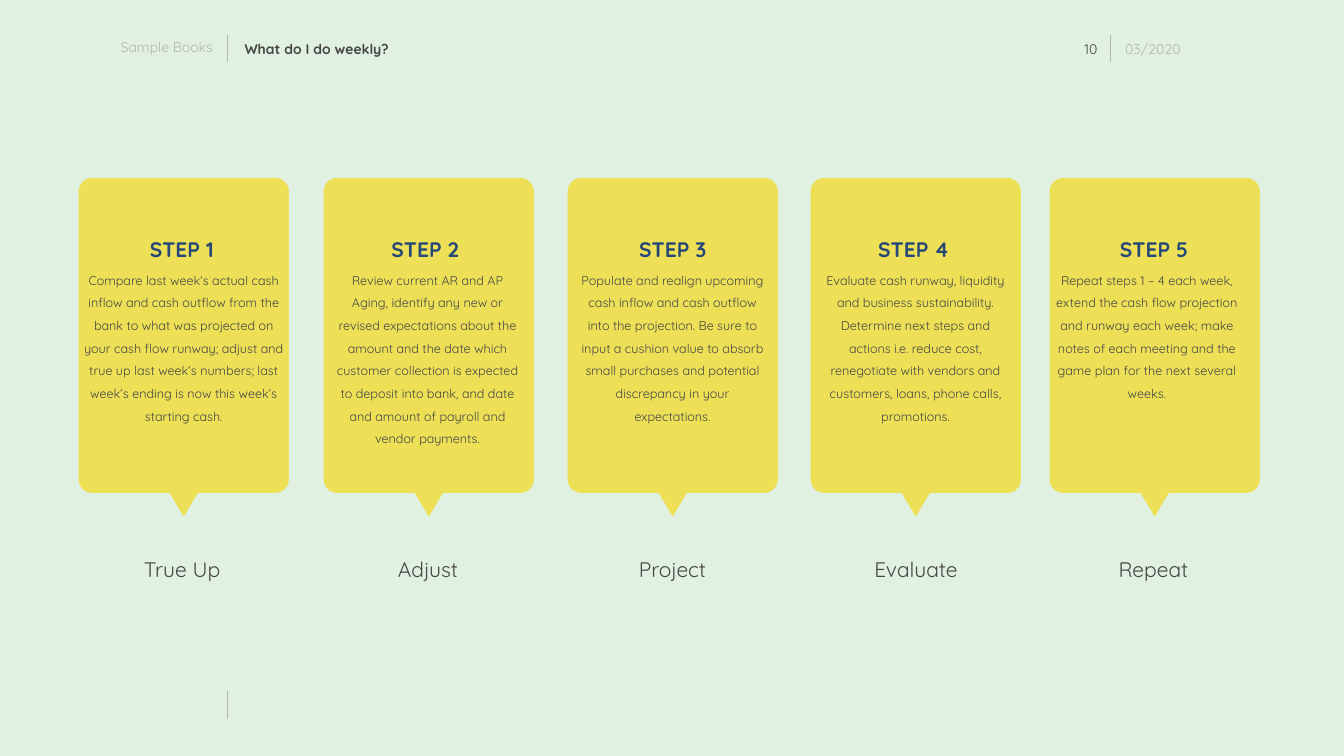
import dataclasses
import math
import typing

import pptx
import pptx.dml.color
import pptx.enum.shapes
import pptx.enum.text
import pptx.oxml
import pptx.oxml.ns
import pptx.shapes.base
import pptx.slide
import pptx.util

RGB = pptx.dml.color.RGBColor
ALIGN = pptx.enum.text.PP_ALIGN
AUTO = pptx.enum.text.MSO_AUTO_SIZE

PX = 9144  # EMU in one px, 100 px to the inch
MINT = RGB(0xE1, 0xF1, 0xE1)
YELLOW = RGB(0xED, 0xE0, 0x57)
NAVY = RGB(0x26, 0x48, 0x77)
INK = RGB(0x46, 0x46, 0x46)
GREY = RGB(0xB4, 0xB4, 0xB4)

CARD_TOP, CARD_W, CARD_H, RADIUS = 353, 417, 625, 27
POINTER_W, POINTER_H = 56, 47
ARC_STEPS = 8


class Box(typing.NamedTuple):
    x: int
    y: int
    w: int
    h: int


@dataclasses.dataclass(frozen=True)
class Style:
    size: int
    color: RGB
    align: ALIGN = ALIGN.CENTER
    bold: bool = False
    spacing: float = 1.0
    inset: int = 10
    fit: AUTO = AUTO.SHAPE_TO_FIT_TEXT


@dataclasses.dataclass(frozen=True)
class Step:
    card_x: int
    heading_x: int
    body_x: int
    body_w: int
    body_h: int
    caption_x: int
    caption: str
    body: str


TITLE = Style(20, INK, ALIGN.LEFT, bold=True)
PAGE = Style(20, INK, ALIGN.RIGHT, inset=20)
COMPANY = Style(20, GREY, ALIGN.RIGHT)
DATE = Style(20, GREY, ALIGN.LEFT)
HEADING = Style(30, NAVY, bold=True, spacing=1.5)
BODY = Style(18, INK, spacing=1.5)
CAPTION = Style(30, INK, spacing=1.3, inset=20, fit=AUTO.NONE)

STEPS = [
    Step(156, 147, 156, 417, 368, 145, "True Up",
         "Compare last week‘s actual cash inflow and cash outflow from the bank to what "
         "was projected on your cash flow runway; adjust and true up last week‘s numbers; "
         "last week‘s ending is now this week‘s starting cash."),
    Step(642, 630, 654, 388, 413, 633, "Adjust",
         "Review current AR and AP Aging, identify any new or revised expectations about "
         "the amount and the date which customer collection is expected to deposit into "
         "bank, and date and amount of payroll and vendor payments."),
    Step(1126, 1121, 1140, 388, 368, 1118, "Project",
         "Populate and realign upcoming cash inflow and cash outflow into the projection. "
         "Be sure to input a cushion value to absorb small purchases and potential "
         "discrepancy in your expectations."),
    Step(1608, 1599, 1622, 388, 322, 1601, "Evaluate",
         "Evaluate cash runway, liquidity and business sustainability. Determine next "
         "steps and actions i.e. reduce cost, renegotiate with vendors and customers, "
         "loans, phone calls, promotions."),
    Step(2082, 2076, 2081, 388, 277, 2072, "Repeat",
         "Repeat steps 1 – 4 each week, extend the cash flow projection and runway each "
         "week; make notes of each meeting and the game plan for the next several weeks."),
]


def set_all(target: object, values: dict[str, typing.Any]) -> None:
    for name, value in values.items():
        setattr(target, name, value)


def write(sp: pptx.shapes.base.BaseShape, box: Box, text: str, style: Style) -> None:
    """Place a text shape and fill it with one formatted paragraph."""
    set_all(sp, dict(zip(("left", "top", "width", "height"), (v * PX for v in box))))
    tf = sp.text_frame
    side, edge = style.inset * PX, style.inset * PX // 2
    set_all(tf, {
        "word_wrap": True, "auto_size": style.fit,
        "vertical_anchor": pptx.enum.text.MSO_ANCHOR.TOP,
        "margin_left": side, "margin_right": side,
        "margin_top": edge, "margin_bottom": edge,
    })
    p = tf.paragraphs[0]
    set_all(p, {"alignment": style.align, "line_spacing": style.spacing})
    r = p.add_run()
    r.text = text
    set_all(r.font, {"name": "Quicksand", "size": pptx.util.Pt(style.size),
                     "bold": style.bold})
    r.font.color.rgb = style.color


def add_text(s: pptx.slide.Slide, box: Box, text: str, style: Style) -> None:
    write(s.shapes.add_textbox(0, 0, 0, 0), box, text, style)


def add_divider(s: pptx.slide.Slide, x: int, y: int) -> None:
    c = s.shapes.add_connector(pptx.enum.shapes.MSO_CONNECTOR.STRAIGHT,
                               x * PX, y * PX, x * PX, (y + 55) * PX)
    c.line.color.rgb = GREY
    c.line.width = pptx.util.Pt(0.75)
    spPr = c._element.spPr
    spPr.append(pptx.oxml.parse_xml(
        f'<a:effectLst {pptx.oxml.ns.nsdecls("a")}/>'))


def corner(cx: float, cy: float, start: int) -> list[tuple[float, float]]:
    """Points of a clockwise quarter circle from the start angle in degrees."""
    angles = [math.radians(start + 90 * i / ARC_STEPS) for i in range(ARC_STEPS + 1)]
    return [(cx + RADIUS * math.cos(a), cy + RADIUS * math.sin(a)) for a in angles]


def add_card(s: pptx.slide.Slide, x: int) -> None:
    """Draw a rounded card with a pointer below its middle."""
    left, right = x + RADIUS, x + CARD_W - RADIUS
    bottom, mid = CARD_TOP + CARD_H, x + CARD_W / 2
    top_y, low_y = CARD_TOP + RADIUS, bottom - RADIUS
    pointer = [(mid + POINTER_W / 2, bottom), (mid, bottom + POINTER_H),
               (mid - POINTER_W / 2, bottom)]
    points = [(px * PX, py * PX) for px, py in (
        corner(left, top_y, 180) + corner(right, top_y, 270)
        + corner(right, low_y, 0) + pointer + corner(left, low_y, 90))]
    fb = s.shapes.build_freeform(*points[0])
    fb.add_line_segments(points[1:], close=True)
    sp = fb.convert_to_shape()
    sp.shadow.inherit = False
    sp.fill.solid()
    sp.fill.fore_color.rgb = YELLOW
    sp.line.fill.background()


def add_step(s: pptx.slide.Slide, number: int, step: Step) -> None:
    add_card(s, step.card_x)
    add_text(s, Box(step.heading_x, 440, 427, 76), f"STEP {number}", HEADING)
    add_text(s, Box(step.body_x, 521, step.body_w, step.body_h), step.body, BODY)
    add_text(s, Box(step.caption_x, 1080, 432, 141), step.caption, CAPTION)


def main() -> None:
    prs = pptx.Presentation()
    set_all(prs, {"slide_width": 2666 * PX, "slide_height": 1500 * PX})
    s = prs.slides.add_slide(prs.slide_layouts[5])
    s.background.fill.solid()
    s.background.fill.fore_color.rgb = MINT

    write(s.shapes.title, Box(475, 75, 665, 44), "What do I do weekly?", TITLE)
    add_text(s, Box(2106, 70, 91, 54), "10", PAGE)
    add_text(s, Box(66, 71, 366, 44), "Sample Books", COMPANY)
    add_text(s, Box(2222, 75, 366, 44), "03/2020", DATE)
    for x, y in ((450, 69), (2203, 69), (450, 1372)):
        add_divider(s, x, y)
    for number, step in enumerate(STEPS, 1):
        add_step(s, number, step)
    prs.save("out.pptx")


if __name__ == "__main__":
    main()
